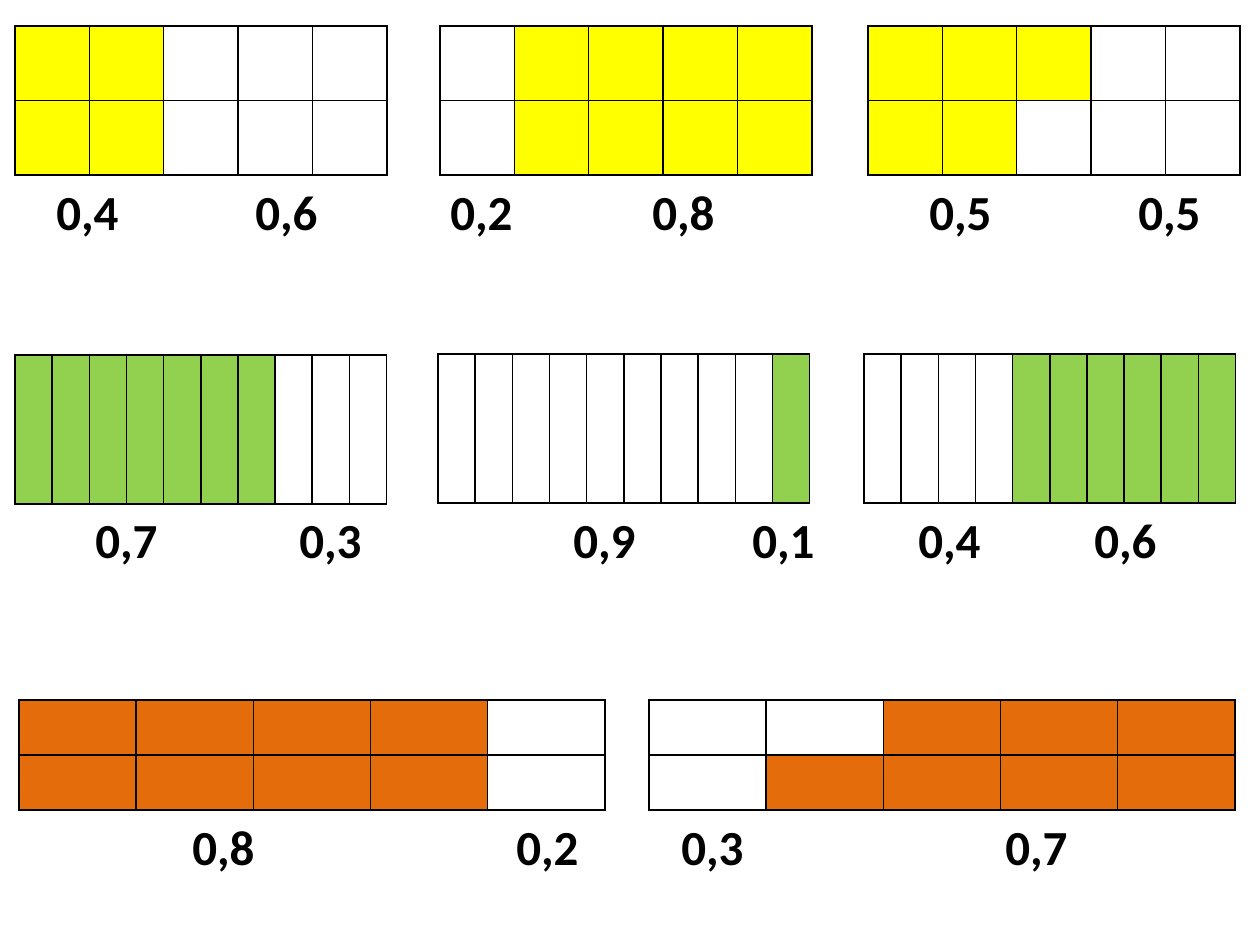
import lxml.etree
import pptx
import pptx.dml.color
import pptx.enum.text
import pptx.oxml.ns
import pptx.util

RGBColor = pptx.dml.color.RGBColor
qn = pptx.oxml.ns.qn
BLACK = RGBColor(0x00, 0x00, 0x00)
WHITE = RGBColor(0xFF, 0xFF, 0xFF)
YELLOW = RGBColor(0xFF, 0xFF, 0x00)
GREEN = RGBColor(0x92, 0xD0, 0x50)
ORANGE = RGBColor(0xE4, 0x6C, 0x0A)
PX = 914400 / 126


def px(n):
    return pptx.util.Emu(round(n * PX))


def add_text(s, text, left, top, size=28, font="Calibri", color=BLACK, bold=True):
    sp = s.shapes.add_textbox(px(left), px(top), px(88), px(72))
    tf = sp.text_frame
    tf.word_wrap = False
    tf.auto_size = pptx.enum.text.MSO_AUTO_SIZE.SHAPE_TO_FIT_TEXT
    p = tf.paragraphs[0]
    r = p.add_run()
    r.text = text
    r.font.size = pptx.util.Pt(size)
    r.font.name = font
    r.font.bold = bold
    r.font.color.rgb = color


prs = pptx.Presentation()
prs.slide_width = px(1260)
prs.slide_height = px(945)
s = prs.slides.add_slide(prs.slide_layouts[6])

bands = [
    (YELLOW, 372, 149, 175, [
        (15, 26, ["##...", "##..."], [("0,4", 44), ("0,6", 243)]),
        (440, 26, [".####", ".####"], [("0,2", 438), ("0,8", 640)]),
        (868, 26, ["###..", "##..."], [("0,5", 917), ("0,5", 1126)]),
    ]),
    (GREEN, 372, 149, 503, [
        (15, 355, ["#######..."], [("0,7", 83), ("0,3", 287)]),
        (438, 354, [".........#"], [("0,9", 561), ("0,1", 740)]),
        (864, 354, ["....######"], [("0,4", 906), ("0,6", 1082)]),
    ]),
    (ORANGE, 586, 110, 810, [
        (19, 700, ["####.", "####."], [("0,8", 180), ("0,2", 504)]),
        (649, 700, ["..###", ".####"], [("0,3", 669), ("0,7", 993)]),
    ]),
]

for color, width, height, label_top, grids in bands:
    for left, top, pattern, labels in grids:
        rows, cols = len(pattern), len(pattern[0])
        frame = s.shapes.add_table(rows, cols, px(left), px(top), px(width), px(height))
        table = frame.table
        table.first_row = False
        table.horz_banding = False
        for col in table.columns:
            col.width = px(width / cols)
        for row, marks in zip(table.rows, pattern):
            row.height = px(height / rows)
            for cell, mark in zip(row.cells, marks):
                tcPr = cell._tc.get_or_add_tcPr()
                for side in ("a:lnL", "a:lnR", "a:lnT", "a:lnB"):
                    ln = lxml.etree.SubElement(tcPr, qn(side), w="12700")
                    fill = lxml.etree.SubElement(ln, qn("a:solidFill"))
                    lxml.etree.SubElement(fill, qn("a:srgbClr"), val=str(BLACK))
                cell.fill.solid()
                cell.fill.fore_color.rgb = color if mark == "#" else WHITE
        for text, label_left in labels:
            add_text(s, text, label_left, label_top)

prs.save("out.pptx")
